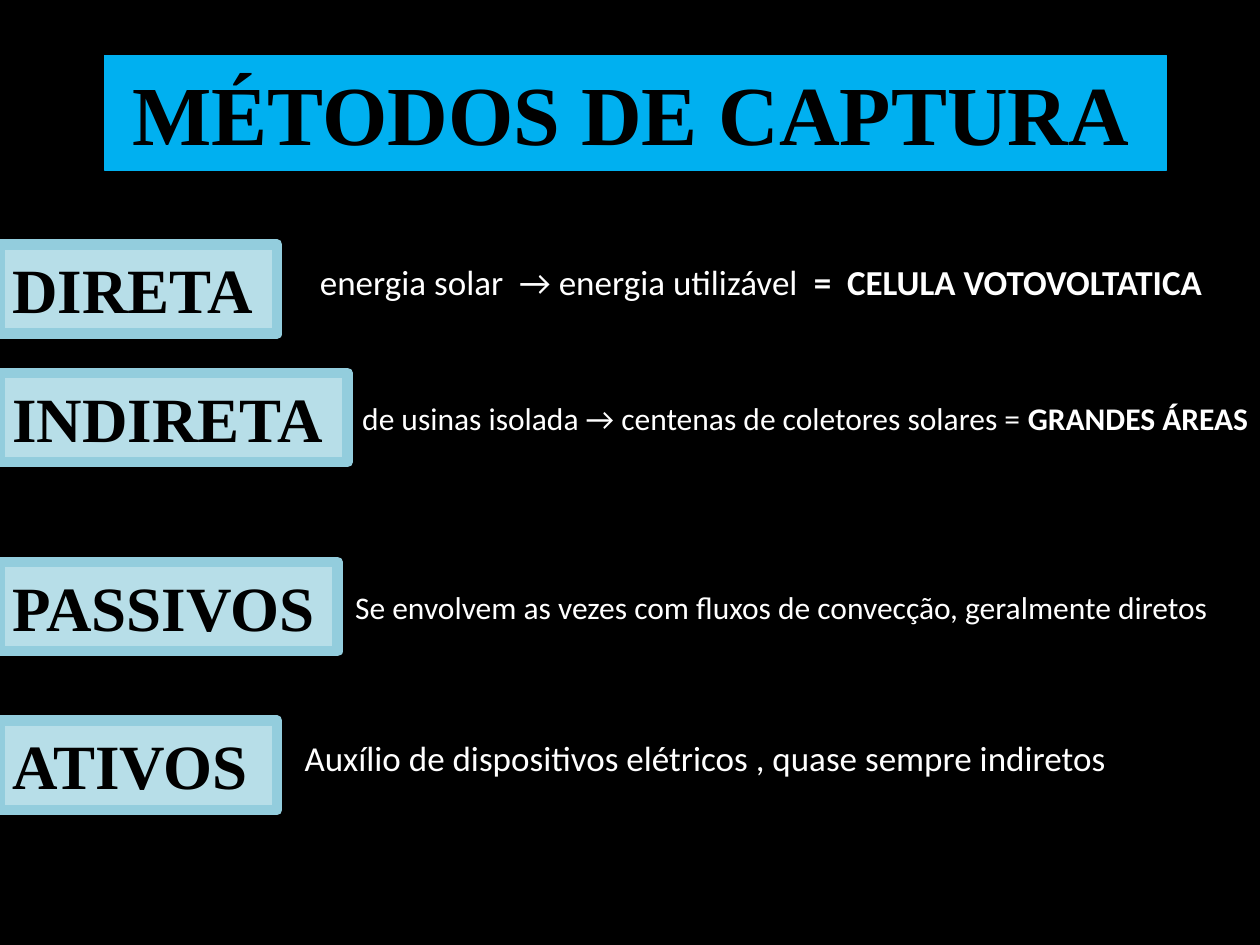
from pptx import Presentation
from pptx.dml.color import RGBColor
from pptx.enum.shapes import MSO_SHAPE as Shape
from pptx.enum.text import MSO_ANCHOR as Anchor, PP_ALIGN as Align
from pptx.util import Cm, Pt

# Content: runs are (text, bold, size)
TITLE = [("MÉTODOS DE CAPTURA", True, 48), (" ", True, 20)]

# label, top, label width, text left, text top, text width, text height, runs (cm)
METHODS = [
    ("DIRETA", 4.93, 5.59, 6.2, 5.13, 20.29, 1.11,
     [("energia solar  → energia utilizável  ", False, 20),
      ("=  CELULA VOTOVOLTATICA", True, 20)]),
    ("INDIRETA", 7.52, 7.01, 6.91, 7.92, 18.9, 1.03,
     [(" de usinas isolada → centenas de coletores solares = ", False, 18),
      ("GRANDES ÁREAS", True, 18)]),
    ("PASSIVOS", 11.33, 6.81, 6.91, 11.73, 19.2, 1.03,
     [("Se envolvem as vezes com fluxos de convecção, geralmente diretos", False, 18)]),
    ("ATIVOS", 14.53, 5.59, 5.89, 14.73, 17.4, 1.11,
     [("Auxílio de dispositivos elétricos , quase sempre indiretos", False, 20)]),
]
LABEL_HEIGHT = 1.8


def color(value):
    return RGBColor.from_string(value)


def write(shape, runs, font_name, font_color, align=Align.LEFT):
    frame = shape.text_frame
    frame.word_wrap = True
    frame.vertical_anchor = Anchor.TOP
    paragraph = frame.paragraphs[0]
    paragraph.alignment = align
    paragraph.font.name = font_name
    paragraph.font.color.rgb = color(font_color)
    for text, bold, size in runs:
        run = paragraph.add_run()
        run.text = text
        run.font.name = font_name
        run.font.color.rgb = color(font_color)
        run.font.bold = bold
        run.font.size = Pt(size)


def add_box(slide, box, fill, line, line_width, runs, align=Align.LEFT):
    shape = slide.shapes.add_shape(Shape.RECTANGLE, *map(Cm, box))
    shape.shadow.inherit = False
    shape.fill.solid()
    shape.fill.fore_color.rgb = color(fill)
    shape.line.color.rgb = color(line)
    shape.line.width = Pt(line_width)
    write(shape, runs, "Times New Roman", "000000", align)


presentation = Presentation()
presentation.slide_width, presentation.slide_height = Cm(25.4), Cm(19.05)
slide = presentation.slides.add_slide(presentation.slide_layouts[6])
slide.background.fill.solid()
slide.background.fill.fore_color.rgb = color("000000")

# Title banner
add_box(slide, (2.11, 1.12, 21.41, 2.31), "00B0F0", "00B0F0", 0.75, TITLE, Align.CENTER)

# One label and one description per method
for label, top, width, text_left, text_top, text_width, text_height, runs in METHODS:
    add_box(slide, (0, top, width, LABEL_HEIGHT), "B7DEE8", "93CDDD", 6,
            [(label, True, 36)])
    description = slide.shapes.add_textbox(
        Cm(text_left), Cm(text_top), Cm(text_width), Cm(text_height))
    write(description, runs, "Calibri", "FFFFFF")

presentation.save("out.pptx")
